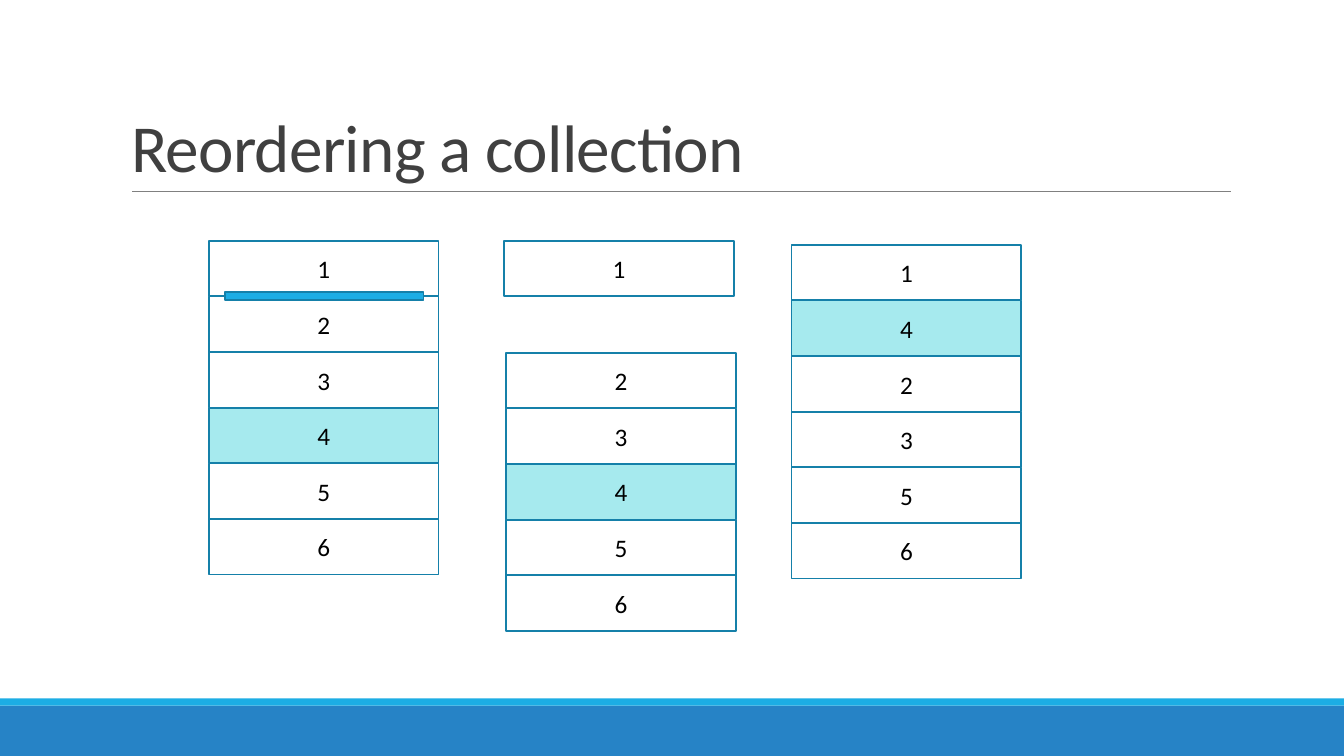
import pptx
import pptx.util
import pptx.dml.color
import pptx.enum.shapes
import pptx.enum.text
import pptx.oxml.ns
from lxml import etree

Inches, Pt = pptx.util.Inches, pptx.util.Pt
Align = pptx.enum.text.PP_ALIGN
Anchor = pptx.enum.text.MSO_ANCHOR

TITLE = "Reordering a collection"
FONT = "Calibri"
MOVED = "4"
# left, top, items from top to bottom
STACKS = [
    (5.02, 3.5, "23456"),
    (5, 2.39, "1"),
    (2.07, 2.39, "123456"),
    (7.85, 2.43, "142356"),
]
WIDTH, HEIGHT, STEP = 2.28, 0.55, 0.552
BANDS = [(7, 0.5, "2683C6"), (6.93, 0.07, "1CADE4")]
MARK = (2.23, 2.9, 1.97, 0.08)
EDGE = "1580A9"


def color(code):
    return pptx.dml.color.RGBColor.from_string(code)


def box(slide, left, top, width, height, fill=None, edge=None):
    shape = slide.shapes.add_shape(
        pptx.enum.shapes.MSO_SHAPE.RECTANGLE,
        Inches(left), Inches(top), Inches(width), Inches(height))
    shape.shadow.inherit = False
    if fill:
        shape.fill.solid()
        shape.fill.fore_color.rgb = color(fill)
    else:
        shape.fill.background()
    if edge:
        shape.line.color.rgb = color(edge)
        shape.line.width = Pt(1.25)
    else:
        shape.line.fill.background()
    return shape


def write(shape, text, size, code, align, anchor):
    frame = shape.text_frame
    frame.word_wrap = True
    frame.vertical_anchor = anchor
    para = frame.paragraphs[0]
    para.alignment = align
    run = para.add_run()
    run.text = text
    run.font.name = FONT
    run.font.size = Pt(size)
    run.font.color.rgb = color(code)
    return para, run


def head(slide):
    title = slide.shapes.title
    title.left, title.top = Inches(1.2), Inches(0.31)
    title.width, title.height = Inches(11), Inches(1.59)
    para, run = write(title, TITLE, 48, "404040", Align.LEFT, Anchor.BOTTOM)
    title.text_frame.auto_size = pptx.enum.text.MSO_AUTO_SIZE.NONE
    para.line_spacing = 0.85
    run.font._element.set("spc", "-50")


def rule(slide):
    line = slide.shapes.add_connector(
        pptx.enum.shapes.MSO_CONNECTOR.STRAIGHT,
        Inches(1.31), Inches(1.9), Inches(12.21), Inches(1.9))
    line.line.color.rgb = color("808080")
    line.line.width = Pt(0.5)
    etree.SubElement(line._element.spPr, pptx.oxml.ns.qn("a:effectLst"))


def main():
    deck = pptx.Presentation()
    deck.slide_width, deck.slide_height = Inches(13.33), Inches(7.5)
    slide = deck.slides.add_slide(deck.slide_layouts[5])
    for top, height, fill in BANDS:
        box(slide, 0, top, 13.33, height, fill)
    rule(slide)
    head(slide)
    for left, top, items in STACKS:
        for row, item in enumerate(items):
            fill = "A6EAEE" if item == MOVED else None
            cell = box(slide, left, top + row * STEP, WIDTH, HEIGHT, fill, EDGE)
            write(cell, item, 18, "000000", Align.CENTER, Anchor.MIDDLE)
    box(slide, *MARK, "1CADE4", EDGE)
    deck.save("out.pptx")


if __name__ == "__main__":
    main()
